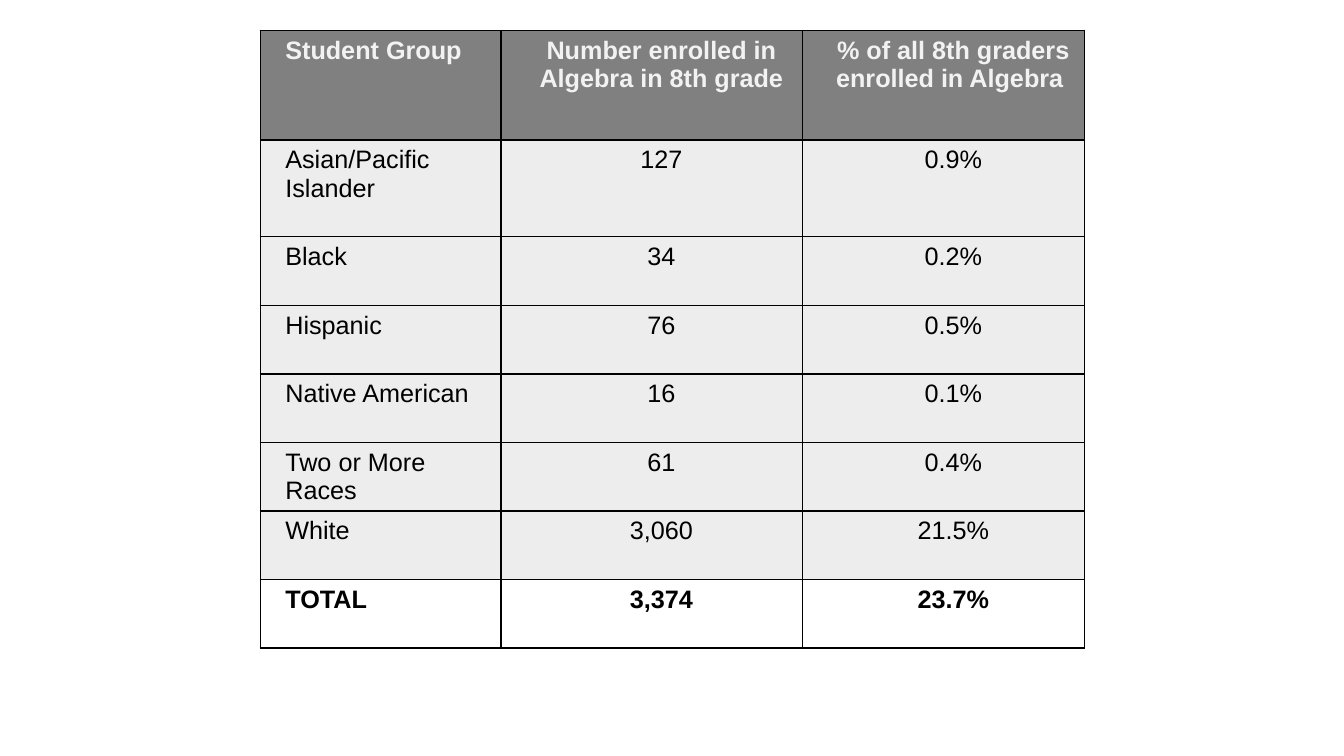
from lxml import etree
from pptx import Presentation
from pptx.dml.color import RGBColor
from pptx.enum.text import PP_ALIGN
from pptx.oxml import parse_xml
from pptx.oxml.ns import nsdecls
from pptx.util import Emu, Pt

PX = 9144  # 100 px to the inch
LEFT, CENTER = PP_ALIGN.LEFT, PP_ALIGN.CENTER

BLACK = RGBColor(0x00, 0x00, 0x00)
OFF_WHITE = RGBColor(0xF2, 0xF2, 0xF2)
HEADER_GRAY = RGBColor(0x80, 0x80, 0x80)
BODY_GRAY = RGBColor(0xED, 0xED, 0xED)

ENROLLMENT = [
    ("Student Group", "Number enrolled in Algebra in 8th grade",
     "% of all 8th graders enrolled in Algebra "),
    ("Asian/Pacific Islander", "127", "0.9%"),
    ("Black", "34", "0.2%"),
    ("Hispanic", "76", "0.5%"),
    ("Native American", "16", "0.1%"),
    ("Two or More Races", "61", "0.4%"),
    ("White", "3,060", "21.5%"),
    ("TOTAL", "3,374", "23.7%"),
]
COLUMN_WIDTHS = [239, 299, 280]
ROW_HEIGHTS = [109, 96] + [68] * 6


def px(length):
    return Emu(length * PX)


class SlideBuilder:
    font_name = "Arial"
    font_size = Pt(18)
    cell_margin = px(6)
    cell_indent = px(19)
    border_width = Pt(1)

    def __init__(self, slide):
        self.slide = slide

    def table(self, left, top, widths, heights, rows):
        table = self.slide.shapes.add_table(
            len(rows), len(widths), px(left), px(top),
            px(sum(widths)), px(sum(heights))).table
        table.horz_banding = False
        for column, width in zip(table.columns, widths):
            column.width = px(width)
        for row, height in zip(table.rows, heights):
            row.height = px(height)
        return table

    def cell(self, cell, text, align, color, bold, fill):
        cell.margin_left = cell.margin_right = self.cell_margin
        cell.margin_top = cell.margin_bottom = self.cell_margin
        if fill is None:
            cell.fill.background()
        else:
            cell.fill.solid()
            cell.fill.fore_color.rgb = fill
        self.borders(cell)

        cell.text = text
        paragraph = cell.text_frame.paragraphs[0]
        paragraph.alignment = align
        properties = paragraph._p.get_or_add_pPr()
        properties.set("marL", str(self.cell_indent))
        properties.set("indent", "0")
        font = paragraph.font
        font.name, font.size, font.bold = self.font_name, self.font_size, bold
        font.color.rgb = color
        # Table styles outrank paragraph defaults, so runs carry them too
        run_font = paragraph.runs[0].font
        run_font.name, run_font.size, run_font.bold = font.name, font.size, bold
        run_font.color.rgb = color

    def borders(self, cell):
        properties = cell._tc.get_or_add_tcPr()
        for position, side in enumerate(("lnL", "lnR", "lnT", "lnB")):
            border = parse_xml(f'<a:{side} {nsdecls("a")} w="{self.border_width}"/>')
            fill = etree.SubElement(border, border.tag.replace(side, "solidFill"))
            etree.SubElement(fill, border.tag.replace(side, "srgbClr"), val=str(BLACK))
            properties.insert(position, border)


def main():
    presentation = Presentation()
    presentation.slide_width, presentation.slide_height = px(1333), px(750)
    blank_layout = presentation.slide_layouts[6]
    builder = SlideBuilder(presentation.slides.add_slide(blank_layout))

    # Enrollment table: header, student groups, total
    enrollment = builder.table(258, 30, COLUMN_WIDTHS, ROW_HEIGHTS, ENROLLMENT)
    header_style = (OFF_WHITE, True, HEADER_GRAY)
    group_style = (BLACK, False, BODY_GRAY)
    total_style = (BLACK, True, None)
    group_count = len(ENROLLMENT) - 2
    row_styles = [header_style] + [group_style] * group_count + [total_style]
    for row, (values, style) in enumerate(zip(ENROLLMENT, row_styles)):
        for column, value in enumerate(values):
            align = CENTER if column else LEFT
            builder.cell(enrollment.cell(row, column), value, align, *style)

    presentation.save("out.pptx")


if __name__ == "__main__":
    main()
